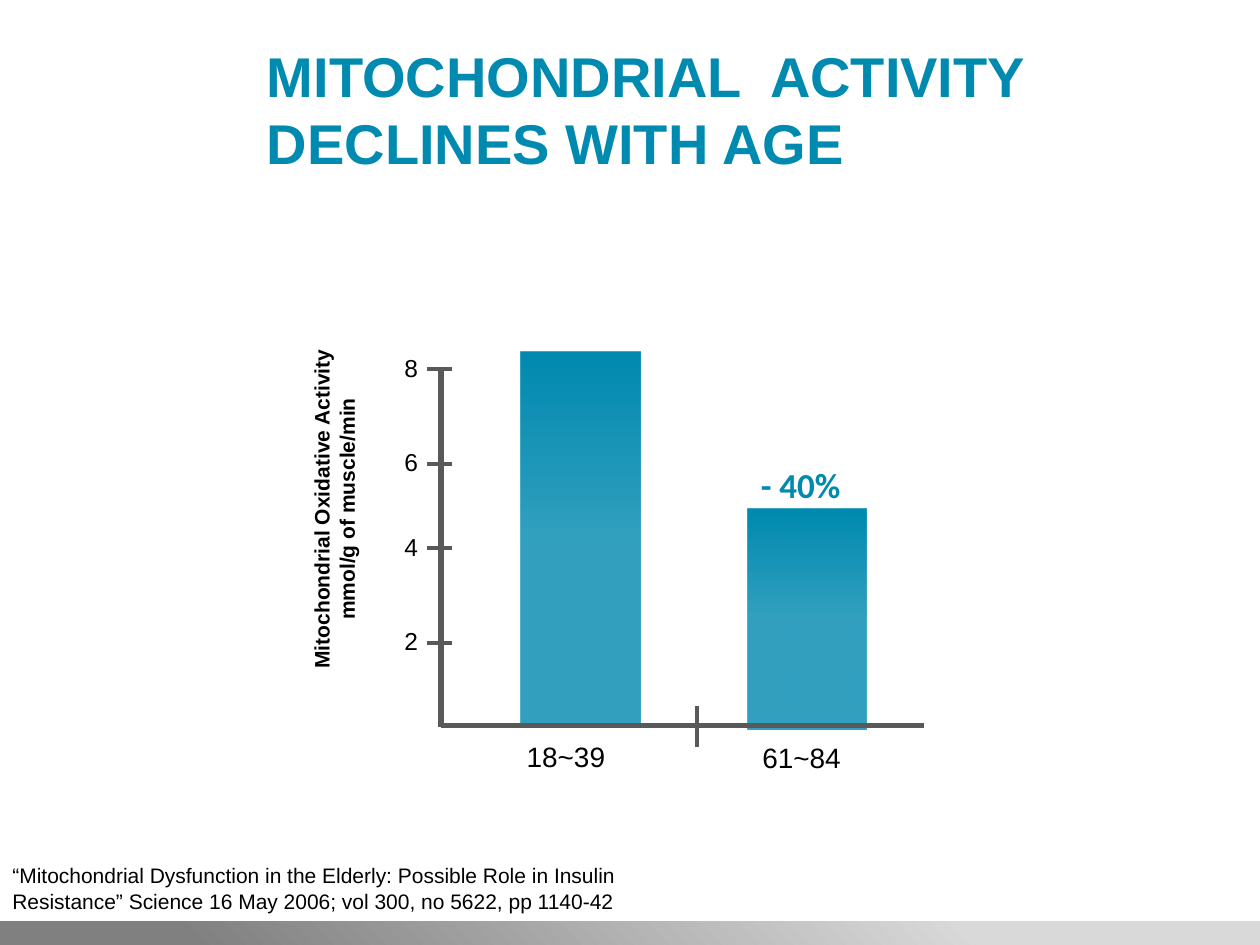
import pptx
import pptx.dml.color
import pptx.enum.shapes
import pptx.enum.text
import pptx.oxml
import pptx.oxml.ns
import pptx.oxml.xmlchemy
import pptx.util
from pptx.util import Inches

COLOURS = {"teal": "008AB0", "axis": "595959", "text": "000000",
           "light": "D9D9D9", "dark": "808080"}
ALIGN = pptx.enum.text.PP_ALIGN
ANCHOR = pptx.enum.text.MSO_ANCHOR
SMALL_INSETS = (0.07, 0.04)


def colour(name):
    return pptx.dml.color.RGBColor.from_string(COLOURS[name])


def add_text(slide, box, lines, size, tint="text", bold=False, font="Arial",
             align=ALIGN.LEFT, insets=(0.1, 0.05), wrap=True, grow=True,
             anchor=ANCHOR.TOP):
    shape = slide.shapes.add_textbox(*map(Inches, box))
    frame = shape.text_frame
    side, edge = map(Inches, insets)
    auto_size = pptx.enum.text.MSO_AUTO_SIZE
    frame_format = {
        "word_wrap": wrap, "vertical_anchor": anchor,
        "auto_size": auto_size.SHAPE_TO_FIT_TEXT if grow else auto_size.NONE,
        "margin_left": side, "margin_right": side,
        "margin_top": edge, "margin_bottom": edge,
    }
    for name, value in frame_format.items():
        setattr(frame, name, value)
    frame.text = lines
    for paragraph in frame.paragraphs:
        paragraph.alignment = align
        font_format = {"name": font, "size": pptx.util.Pt(size), "bold": bold}
        for run in paragraph.runs:
            for name, value in font_format.items():
                setattr(run.font, name, value)
            run.font.color.rgb = colour(tint)
    return shape


def add_gradient_box(slide, box, stops):
    """Add a borderless rectangle that fades downwards through two (position, colour) stops."""
    shape = slide.shapes.add_shape(
        pptx.enum.shapes.MSO_SHAPE.RECTANGLE, *map(Inches, box))
    shape.shadow.inherit = False
    shape.line.fill.background()
    shape.fill.gradient()
    shape.fill.gradient_angle = 270
    for stop, (position, name) in zip(shape.fill.gradient_stops, stops):
        stop.position = position
        stop.color.rgb = colour(name)
    return shape


def add_line(slide, start, end, width):
    line = slide.shapes.add_connector(
        pptx.enum.shapes.MSO_CONNECTOR.STRAIGHT, *map(Inches, (*start, *end)))
    line.line.color.rgb = colour("axis")
    line.line.width = pptx.util.Pt(width)
    line._element.spPr.append(pptx.oxml.xmlchemy.OxmlElement("a:effectLst"))


def add_bar(slide, box):
    bar = add_gradient_box(slide, box, [(0, "teal"), (0.5, "teal")])
    last_colour = bar._element.spPr.findall(
        ".//" + pptx.oxml.ns.qn("a:srgbClr"))[-1]
    alpha = pptx.oxml.xmlchemy.OxmlElement("a:alpha")
    alpha.set("val", "80000")
    last_colour.append(alpha)


def add_title(slide, box):
    add_text(slide, box, "MITOCHONDRIAL  ACTIVITY \vDECLINES WITH AGE", 32,
             "teal", bold=True, grow=False, anchor=ANCHOR.MIDDLE)


def add_activity_chart(slide, box):
    left, top, width, height = box
    axis_x, base_y = left + 1.1, top + 3.31

    axis_title = add_text(
        slide, (left, top, 0.61, 3.18),
        "Mitochondrial Oxidative Activity\nmmol/g of muscle/min", 12,
        bold=True, align=ALIGN.CENTER)
    axis_title.text_frame._txBody.bodyPr.set("vert", "vert270")

    # Group label, bar offset, bar top, bar height, label offset, label top
    groups = [("18~39", 1.73, 0.34, 2.98, 1.71, 3.38),
              ("61~84", 3.53, 1.59, 1.75, 3.58, 3.39)]
    for label, bar_x, bar_y, bar_height, label_x, label_y in groups:
        add_bar(slide, (left + bar_x, top + bar_y, 0.95, bar_height))
        add_text(slide, (left + label_x, top + label_y, 0.77, 0.34), label, 16,
                 insets=SMALL_INSETS, wrap=False)

    add_line(slide, (axis_x, top + 0.48), (axis_x, base_y + 0.01), 3)
    add_line(slide, (left + width, base_y), (axis_x, base_y), 3)
    add_line(slide, (left + 3.13, top + 3.15), (left + 3.13, top + 3.48), 2.25)

    for value, offset in {"8": 0.48, "6": 1.23, "4": 1.9, "2": 2.65}.items():
        tick_y = top + offset
        add_line(slide, (axis_x + 0.09, tick_y), (axis_x - 0.11, tick_y), 2.25)
        add_text(slide, (left + 0.74, tick_y - 0.17, 0.5, 0.31), value, 14,
                 insets=SMALL_INSETS)

    add_text(slide, (left + 3.44, top + 1.18, 1.03, 0.44), "- 40%", 20, "teal",
             bold=True, font="Calibri", align=ALIGN.CENTER)


def add_footer_band(slide, box):
    """Add the grey band, which darkens outwards from its top right corner."""
    band = add_gradient_box(slide, box, [(0.23, "light"), (0.85, "dark")])
    gradient = band._element.spPr.find(pptx.oxml.ns.qn("a:gradFill"))
    gradient.replace(
        gradient.find(pptx.oxml.ns.qn("a:lin")),
        pptx.oxml.parse_xml(
            f'<a:path {pptx.oxml.ns.nsdecls("a")} path="circle">'
            '<a:fillToRect l="100000" b="100000"/></a:path>'))


def add_citation(slide, box):
    add_text(slide, box,
             "“Mitochondrial Dysfunction in the Elderly: Possible Role in Insulin "
             "Resistance” Science 16 May 2006; vol 300, no 5622, pp 1140-42", 12)


def main():
    presentation = pptx.Presentation()
    presentation.slide_width = Inches(10)
    presentation.slide_height = Inches(7.5)
    slide = presentation.slides.add_slide(presentation.slide_layouts[6])
    add_footer_band(slide, (0, 7.31, 10, 0.19))
    add_title(slide, (2.02, 0.54, 7.98, 0.64))
    add_activity_chart(slide, (2.4, 2.45, 4.93, 3.73))
    add_citation(slide, (0, 6.8, 5.1, 0.5))
    presentation.save("out.pptx")


if __name__ == "__main__":
    main()
